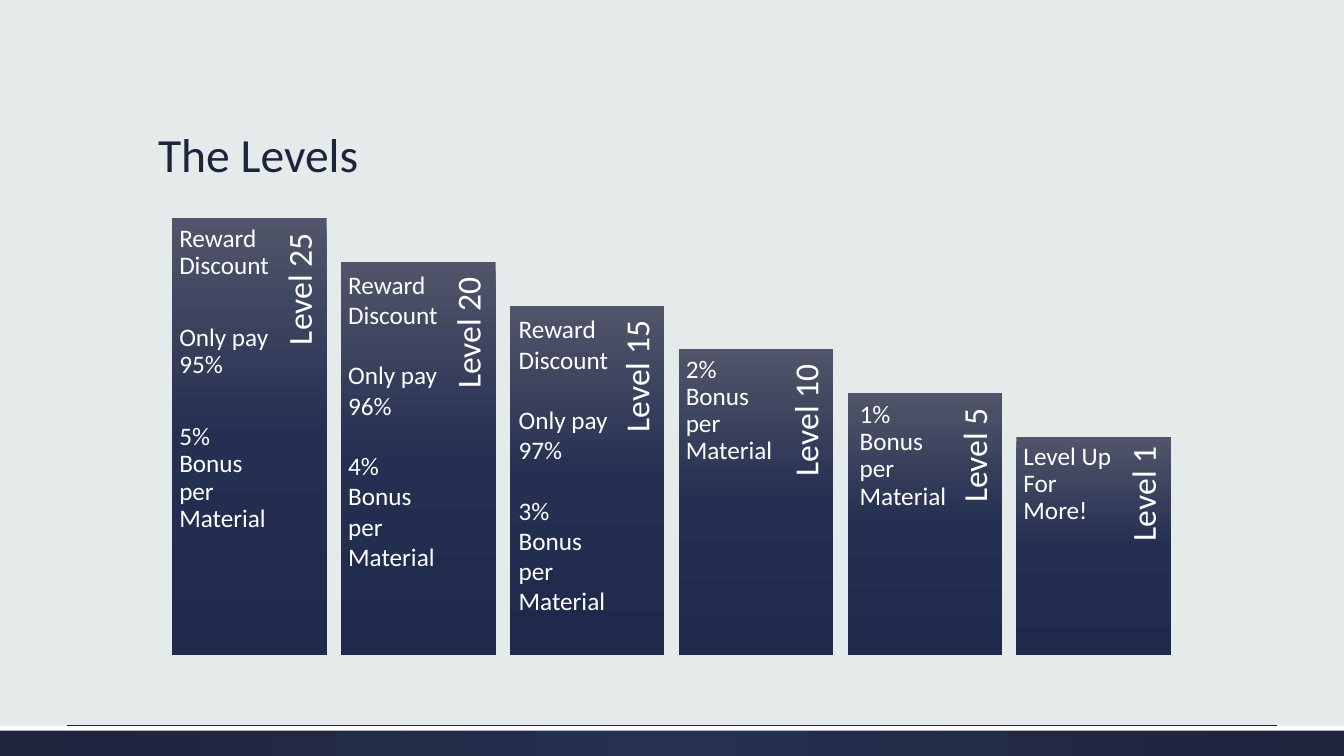
import pptx
import pptx.dml.color
import pptx.enum.shapes
import pptx.enum.text
import pptx.oxml
import pptx.oxml.ns
import pptx.util

ANCHOR = pptx.enum.text.MSO_ANCHOR
ALIGN = pptx.enum.text.PP_ALIGN

NAVY, WHITE, BACKGROUND = "1D243C", "FFFFFF", "E5EAEA"
BAR_STOPS = [(0, "515569"), (50, "242F52"), (100, "1E294B")]
STRIP_STOPS = [(0, "263050"), (100, NAVY)]
LINEAR = '<a:lin ang="5400000" scaled="0"/>'
RADIAL = ('<a:path path="circle"><a:fillToRect l="50000" t="50000" '
          'r="50000" b="50000"/></a:path>')

# Bar layout in grid units (160 columns by 90 rows)
BAR_LEFT, BAR_TOP, BAR_BOTTOM = 20.5, 26, 78
BAR_PITCH, BAR_STEP, BAR_WIDTH = 20.1, 5.2, 18.4
TEXT_WIDTH, LABEL_CENTER, LABEL_THICKNESS = 12.84, 15.5, 4.8

# Label, paragraphs, line spacing, paragraph gap, text offset (columns, rows)
LEVELS = [
    ("Level 25", ["Reward Discount", "Only pay 95%", "5% Bonus per Material"], 0.9, 32, (0, 0)),
    ("Level 20", ["Reward Discount", "Only pay 96%", "4% Bonus per Material"], 1.0, 21.6, (0, 0)),
    ("Level 15", ["Reward Discount", "Only pay 97%", "3% Bonus per Material"], 1.0, 21.6, (0.2, 0.1)),
    ("Level 10", ["2% Bonus per Material"], 0.9, 0, (0, 0)),
    ("Level 5", ["1% Bonus per Material"], 0.9, 0, (0.6, 0.2)),
    ("Level 1", ["Level Up For More!"], 0.9, 0, (0, 0)),
]


def color(hex_value):
    return pptx.dml.color.RGBColor.from_string(hex_value)


class LevelsSlide:
    """Draws on one slide, with lengths in columns and rows of a 160 by 90 grid."""

    font = "Calibri"

    def __init__(self, presentation):
        self.unit = presentation.slide_width / 160
        self.slide = presentation.slides.add_slide(presentation.slide_layouts[6])
        self.slide.background.fill.solid()
        self.slide.background.fill.fore_color.rgb = color(BACKGROUND)

    def lengths(self, *values):
        return [pptx.util.Emu(round(value * self.unit)) for value in values]

    def rectangle(self, box, fill=WHITE):
        shape = self.slide.shapes.add_shape(
            pptx.enum.shapes.MSO_SHAPE.RECTANGLE, *self.lengths(*box))
        shape.shadow.inherit = False
        shape.line.fill.background()
        shape.fill.solid()
        shape.fill.fore_color.rgb = color(fill)
        return shape

    def gradient_rectangle(self, box, stops, direction):
        properties = self.rectangle(box).element.spPr
        stop_xml = "".join(
            f'<a:gs pos="{position * 1000}"><a:srgbClr val="{value}"/></a:gs>'
            for position, value in stops)
        gradient = pptx.oxml.parse_xml(
            f'<a:gradFill {pptx.oxml.ns.nsdecls("a")} rotWithShape="1">'
            f'<a:gsLst>{stop_xml}</a:gsLst>{direction}</a:gradFill>')
        properties.replace(properties.find(pptx.oxml.ns.qn("a:solidFill")), gradient)

    def line(self, left, right, row):
        connector = self.slide.shapes.add_connector(
            pptx.enum.shapes.MSO_CONNECTOR.STRAIGHT, *self.lengths(left, row, right, row))
        connector.line.color.rgb = color(NAVY)
        connector.line.width = pptx.util.Pt(0.75)
        connector.element.spPr.append(
            pptx.oxml.parse_xml(f'<a:effectLst {pptx.oxml.ns.nsdecls("a")}/>'))

    def text(self, box, paragraphs, size, fill=WHITE, insets=(0.07,) * 4,
             anchor=ANCHOR.TOP, align=ALIGN.LEFT, spacing=0.9, gap=0):
        """Adds a text box; insets are left, top, right, bottom in inches."""
        shape = self.slide.shapes.add_textbox(*self.lengths(*box))
        frame = shape.text_frame
        frame.word_wrap = True
        frame.vertical_anchor = anchor
        (frame.margin_left, frame.margin_top,
         frame.margin_right, frame.margin_bottom) = map(pptx.util.Inches, insets)
        frame.text = "\n".join(paragraphs)
        for paragraph in frame.paragraphs:
            paragraph.alignment = align
            paragraph.line_spacing = spacing
            paragraph.space_after = pptx.util.Pt(gap)
            paragraph.font.name = self.font
            paragraph.font.size = pptx.util.Pt(size)
            paragraph.font.color.rgb = color(fill)
        return shape

    def level(self, index, label, paragraphs, spacing, gap, offset):
        left = BAR_LEFT + index * BAR_PITCH
        top = BAR_TOP + index * BAR_STEP
        height = BAR_BOTTOM - top
        self.gradient_rectangle((left, top, BAR_WIDTH, height), BAR_STOPS, LINEAR)

        length = 0.9 * height
        label_box = (left + LABEL_CENTER - length / 2,
                     top + (length - LABEL_THICKNESS) / 2, length, LABEL_THICKNESS)
        end_inset = 0.1 if index == len(LEVELS) - 1 else 0.15
        label_shape = self.text(label_box, [label], 24, insets=(0.1, 0, end_inset, 0.03),
                                anchor=ANCHOR.MIDDLE, align=ALIGN.RIGHT)
        label_shape.rotation = 270

        self.text((left + offset[0], top + offset[1], TEXT_WIDTH, height),
                  paragraphs, 18, spacing=spacing, gap=gap)


def main():
    presentation = pptx.Presentation()
    presentation.slide_width = pptx.util.Inches(13.33)
    presentation.slide_height = pptx.util.Inches(7.5)
    slide = LevelsSlide(presentation)
    slide.gradient_rectangle((0, 86.4, 160, 3.6), STRIP_STOPS, RADIAL)
    slide.rectangle((0, 86.4, 160, 0.6))
    slide.line(8, 152, 86.35)
    slide.text((17.64, 6.12, 124.8, 16.2), ["The Levels"], 34, NAVY,
               insets=(0.1, 0.05, 0.1, 0.05), anchor=ANCHOR.BOTTOM)
    for index, level in enumerate(LEVELS):
        slide.level(index, *level)
    presentation.save("out.pptx")


if __name__ == "__main__":
    main()
